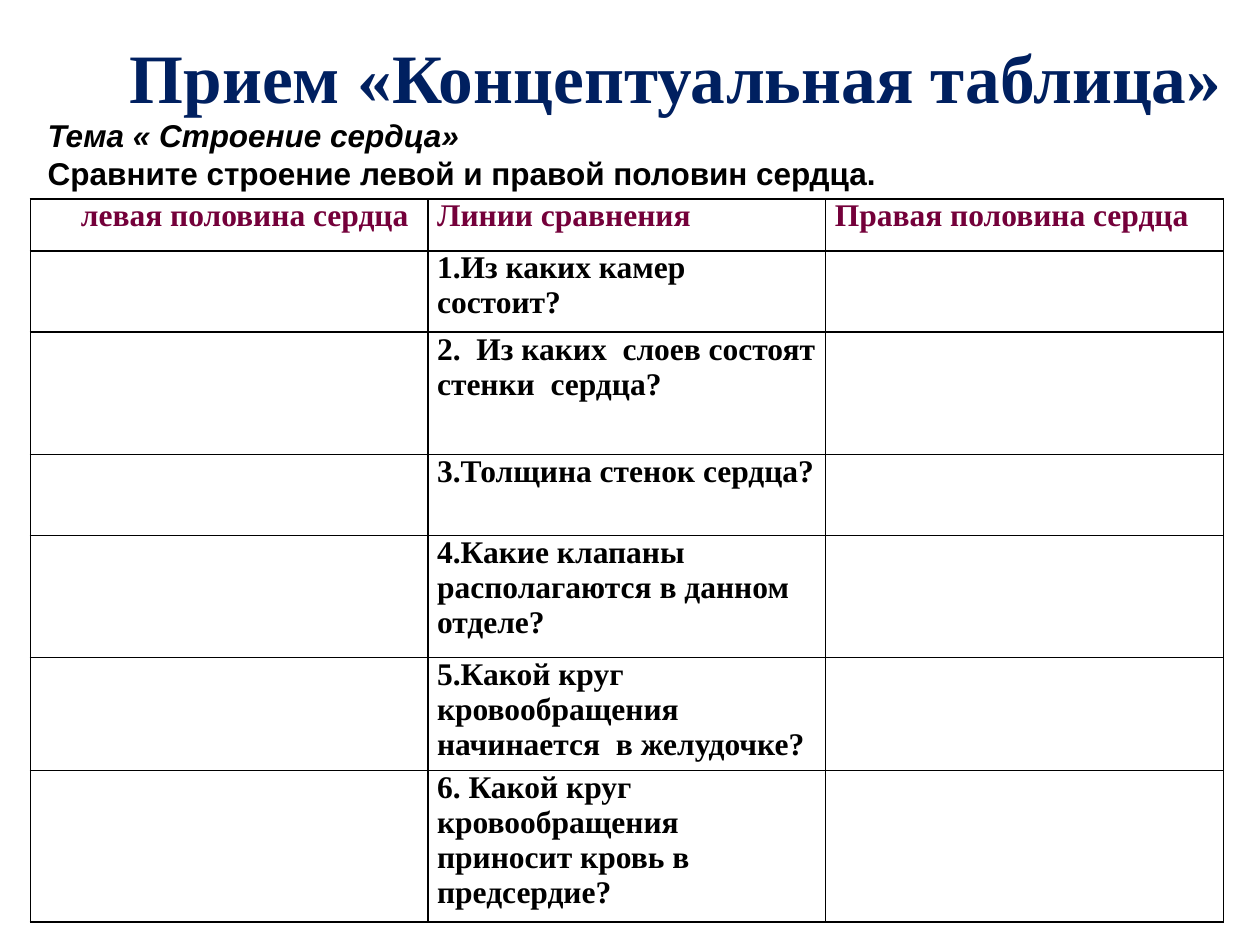
from pptx import Presentation
from pptx.dml.color import RGBColor
from pptx.enum.text import MSO_ANCHOR, MSO_AUTO_SIZE, PP_ALIGN
from pptx.util import Pt
from lxml.etree import fromstring

NS = "http://schemas.openxmlformats.org/drawingml/2006/main"


def style(para, size, face, color, italic=False):
    font = para.font
    font.size, font.name = Pt(size), face
    font.bold, font.italic = True, italic
    font.color.rgb = RGBColor.from_string(color)


def border(cell, color, width):
    props = cell._tc.get_or_add_tcPr()
    for i, side in enumerate(("lnL", "lnR", "lnT", "lnB")):
        props.insert(i, fromstring(
            f'<a:{side} xmlns:a="{NS}" w="{Pt(width)}"><a:solidFill>'
            f'<a:srgbClr val="{color}"/></a:solidFill></a:{side}>'))


deck = Presentation()
deck.slide_width, deck.slide_height = Pt(720), Pt(540)
slide = deck.slides.add_slide(deck.slide_layouts[5])

# Title
title = slide.shapes.title
title.left, title.top, title.width, title.height = Pt(62.6), Pt(23.8), Pt(647.3), Pt(38.9)
frame = title.text_frame
frame.text = "Прием «Концептуальная таблица» "
frame.auto_size = MSO_AUTO_SIZE.NONE
frame.vertical_anchor = MSO_ANCHOR.MIDDLE
frame.paragraphs[0].alignment = PP_ALIGN.CENTER
style(frame.paragraphs[0], 39.6, "Times New Roman", "002060")

# Comparison table
heads = ["левая половина сердца", "Линии сравнения", "Правая половина сердца"]
asks = [
    "1.Из каких камер состоит?",
    "2.  Из каких  слоев состоят стенки  сердца?",
    "3.Толщина стенок сердца?",
    "4.Какие клапаны располагаются в данном отделе?",
    "5.Какой круг кровообращения  начинается  в желудочке?",
    "6. Какой круг кровообращения приносит кровь в предсердие?",
]
rows = [heads] + [["", ask, ""] for ask in asks]
sizes = [29.7, 46.5, 69.8, 46.5, 69.8, 64.5, 86.4]

table = slide.shapes.add_table(
    len(rows), 3, Pt(17.3), Pt(113.6), Pt(682), Pt(sum(sizes))).table
table.first_row = table.horz_banding = False
for col in table.columns:
    col.width = Pt(227.3)
for r, (texts, size) in enumerate(zip(rows, sizes)):
    table.rows[r].height = Pt(size)
    for c, text in enumerate(texts):
        cell = table.cell(r, c)
        cell.fill.background()
        border(cell, "000000", 1)
        cell.margin_left = cell.margin_right = Pt(5.2)
        cell.margin_top = cell.margin_bottom = 0
        cell.text = text
        style(cell.text_frame.paragraphs[0], 18, "Times New Roman",
              "000000" if r else "74003A")

# The first heading is centred a little to the right
first = table.cell(0, 0)
first.margin_left = Pt(23)
first.text_frame.paragraphs[0].alignment = PP_ALIGN.CENTER

# Topic and task
box = slide.shapes.add_textbox(Pt(20.2), Pt(62.6), Pt(660.2), Pt(51))
frame = box.text_frame
frame.word_wrap = True
frame.auto_size = MSO_AUTO_SIZE.SHAPE_TO_FIT_TEXT
frame.text = "Тема « Строение сердца»\nСравните строение левой и правой половин сердца."
for para, slant in zip(frame.paragraphs, (True, False)):
    style(para, 18, "Arial", "000000", slant)

deck.save("out.pptx")
